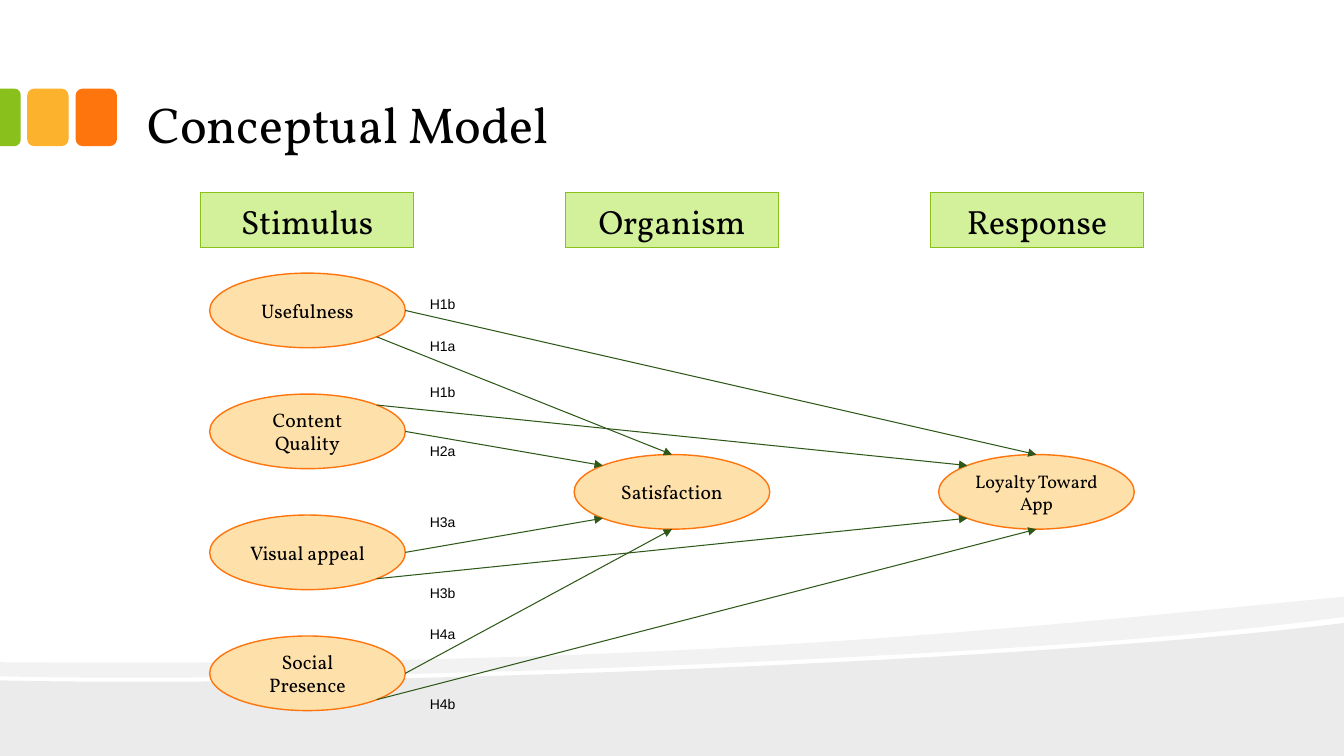
from dataclasses import dataclass
from math import cos, radians, sin

from lxml import etree
from pptx import Presentation
from pptx.dml.color import RGBColor
from pptx.enum.shapes import MSO_CONNECTOR, MSO_SHAPE
from pptx.enum.text import MSO_ANCHOR, MSO_AUTO_SIZE, PP_ALIGN
from pptx.oxml.ns import qn
from pptx.util import Inches, Pt

STRAIGHT = MSO_CONNECTOR.STRAIGHT
OVAL, RECTANGLE = MSO_SHAPE.OVAL, MSO_SHAPE.RECTANGLE
ROUNDED, TOP_ROUNDED = MSO_SHAPE.ROUNDED_RECTANGLE, MSO_SHAPE.ROUND_2_SAME_RECTANGLE
MIDDLE, BOTTOM = MSO_ANCHOR.MIDDLE, MSO_ANCHOR.BOTTOM
CENTER, LEFT = PP_ALIGN.CENTER, PP_ALIGN.LEFT
TITLE_ONLY = 5


@dataclass(frozen=True)
class Theme:
    ink: str = "000000"
    green: str = "89C01C"
    pale_green: str = "D3F09A"
    amber: str = "FCB22C"
    orange: str = "FE750E"
    pale_orange: str = "FEE0AB"
    arrow: str = "2E5818"
    serif: str = "Vollkorn"
    sans: str = "Arial"
    title_size: int = 36
    header_size: int = 24
    node_size: int = 14
    small_node_size: int = 13
    label_size: int = 10


@dataclass(frozen=True)
class Box:
    left: float
    top: float
    width: float
    height: float

    def emu(self):
        return [Inches(v) for v in (self.left, self.top, self.width, self.height)]


THEME = Theme()
SLIDE = Box(0, 0, 13.33, 7.5)
TITLE = Box(1.33, 0.17, 10.66, 1.42)
TABS = Box(0, 0.88, 1.16, 0.57)
HEADERS = Box(1.99, 1.91, 9.35, 0.55)
MODEL = Box(2.08, 2.71, 9.17, 4.34)
HEADER_WIDTH = 2.11
NODE_WIDTH, NODE_HEIGHT = 1.94, 0.74

# Name: column, row, type size
NODES = {
    "Satisfaction": (1, 1.5, THEME.node_size),
    "Usefulness": (0, 0, THEME.node_size),
    "Content Quality": (0, 1, THEME.node_size),
    "Visual appeal": (0, 2, THEME.node_size),
    "Social Presence": (0, 3, THEME.node_size),
    "Loyalty Toward App": (2, 1.5, THEME.small_node_size),
}
# Degrees clockwise from the right end of an oval
SITES = {"right": 0, "lower right": 45, "bottom": 90, "lower left": 135,
         "upper left": 225, "top": 270, "upper right": 315}
# Source, its site, target, its site, label, row of the label
PATHS = [
    ("Usefulness", "lower right", "Satisfaction", "top", "H1a", 0.49),
    ("Usefulness", "right", "Loyalty Toward App", "top", "H1b", 0.14),
    ("Content Quality", "right", "Satisfaction", "upper left", "H2a", 1.36),
    ("Content Quality", "upper right", "Loyalty Toward App", "upper left", "H1b", 0.87),
    ("Visual appeal", "right", "Satisfaction", "lower left", "H3a", 1.95),
    ("Visual appeal", "lower right", "Loyalty Toward App", "lower left", "H3b", 2.53),
    ("Social Presence", "lower right", "Loyalty Toward App", "bottom", "H4b", 3.45),
    ("Social Presence", "right", "Satisfaction", "bottom", "H4a", 2.87),
]


def paint(shape, fill, line=None, line_width=0.75):
    shape.shadow.inherit = False
    shape.fill.solid()
    shape.fill.fore_color.rgb = RGBColor.from_string(fill)
    if line:
        shape.line.color.rgb = RGBColor.from_string(line)
        shape.line.width = Pt(line_width)
    else:
        shape.line.fill.background()


def write(shape, text, size, font, anchor=MIDDLE, align=CENTER, insets=(0.1, 0.05)):
    frame = shape.text_frame
    frame.text = text
    frame.word_wrap = True
    frame.vertical_anchor = anchor
    frame.margin_left = frame.margin_right = Inches(insets[0])
    frame.margin_top = frame.margin_bottom = Inches(insets[1])
    paragraph = frame.paragraphs[0]
    paragraph.alignment = align
    run_font = paragraph.runs[0].font
    run_font.size, run_font.name = Pt(size), font
    run_font.color.rgb = RGBColor.from_string(THEME.ink)


def curve(start, control_1, control_2, end, steps=40):
    """Points along a cubic curve."""
    points = []
    for step in range(steps + 1):
        t = step / steps
        weights = ((1 - t) ** 3, 3 * t * (1 - t) ** 2, 3 * t * t * (1 - t), t ** 3)
        points.append(tuple(sum(w * p[axis] for w, p in zip(weights, (start, control_1, control_2, end)))
                            for axis in (0, 1)))
    return points


def add_band(slide, points, opacity):
    points = [(Inches(x), Inches(y)) for x, y in points]
    builder = slide.shapes.build_freeform(*points[0])
    builder.add_line_segments(points[1:], close=True)
    band = builder.convert_to_shape()
    paint(band, THEME.ink)
    color = band.fill._xPr.find(".//" + qn("a:srgbClr"))
    etree.SubElement(color, qn("a:alpha"), val=str(opacity * 1000))


def add_waves(slide, box):
    right, bottom = box.left + box.width, box.top + box.height
    # Broad wave down to the slide's foot
    crest = curve((0, 6.75), (3.52, 6.83), (10.42, 6.55), (right, 6.18))
    add_band(slide, crest + [(right, bottom), (0, bottom)], 8)
    # Thin wave above it
    upper = curve((0, 6.57), (6.52, 6.62), (9.71, 6.27), (right, 5.92))
    lower = curve((right, 6.12), (12.55, 6.23), (11.49, 6.33), (10.29, 6.41))
    lower += curve((10.29, 6.41), (6.98, 6.63), (2.58, 6.77), (0, 6.71))[1:]
    add_band(slide, upper + lower, 5)


def add_tabs(slide, box):
    width, pitch = 0.41, 0.48
    for index, color in enumerate((THEME.orange, THEME.amber)):
        left = box.left + box.width - width - index * pitch
        tab = slide.shapes.add_shape(ROUNDED, *Box(left, box.top, width, box.height).emu())
        paint(tab, color)
    # Half tab at the slide's edge, turned on its side
    depth = width / 2
    shift = (box.height - depth) / 2
    half = slide.shapes.add_shape(
        TOP_ROUNDED, *Box(box.left - shift, box.top + shift, box.height, depth).emu())
    half.rotation = 90
    half.adjustments[0] = 0.29
    paint(half, THEME.green)


def add_title(slide, box, text):
    title = slide.shapes.title
    title.left, title.top, title.width, title.height = box.emu()
    write(title, text, THEME.title_size, THEME.serif, BOTTOM, LEFT, (0.13, 0.07))
    title.text_frame.auto_size = MSO_AUTO_SIZE.NONE


def add_headers(slide, box, names):
    pitch = (box.width - HEADER_WIDTH) / (len(names) - 1)
    for column, name in enumerate(names):
        place = Box(box.left + column * pitch, box.top, HEADER_WIDTH, box.height)
        header = slide.shapes.add_shape(RECTANGLE, *place.emu())
        paint(header, THEME.pale_green, THEME.green)
        write(header, name, THEME.header_size, THEME.serif, BOTTOM, insets=(0.13, 0.07))


def site_point(place, site):
    angle = radians(SITES[site])
    return (Inches(place.left + place.width / 2 * (1 + cos(angle))),
            Inches(place.top + place.height / 2 * (1 + sin(angle))))


def add_arrow(slide, start, end):
    arrow = slide.shapes.add_connector(STRAIGHT, *start, *end)
    arrow.line.color.rgb = RGBColor.from_string(THEME.arrow)
    arrow.line.width = Pt(0.75)
    etree.SubElement(arrow.line._get_or_add_ln(), qn("a:tailEnd"), type="triangle")
    etree.SubElement(arrow._element.spPr, qn("a:effectLst"))


def add_model(slide, box):
    column_pitch = (box.width - NODE_WIDTH) / 2
    row_pitch = (box.height - NODE_HEIGHT) / 3
    places = {}
    # Ovals
    for name, (column, row, size) in NODES.items():
        places[name] = Box(box.left + column * column_pitch, box.top + row * row_pitch,
                           NODE_WIDTH, NODE_HEIGHT)
        node = slide.shapes.add_shape(OVAL, *places[name].emu())
        paint(node, THEME.pale_orange, THEME.orange, 1)
        write(node, name, size, THEME.serif, insets=(0.05, 0.05))
    # Arrows and their labels
    for source, source_site, target, target_site, text, row in PATHS:
        add_arrow(slide, site_point(places[source], source_site),
                  site_point(places[target], target_site))
        place = Box(box.left + NODE_WIDTH + 0.14, box.top + row * row_pitch, 0.46, 0.27)
        label = slide.shapes.add_textbox(*place.emu())
        write(label, text, THEME.label_size, THEME.sans, MSO_ANCHOR.TOP)
        label.text_frame.word_wrap = False


def main():
    presentation = Presentation()
    presentation.slide_width, presentation.slide_height = SLIDE.emu()[2:]
    slide = presentation.slides.add_slide(presentation.slide_layouts[TITLE_ONLY])
    add_waves(slide, SLIDE)
    add_tabs(slide, TABS)
    add_title(slide, TITLE, "Conceptual Model")
    add_model(slide, MODEL)
    add_headers(slide, HEADERS, ("Stimulus", "Organism", "Response"))
    presentation.save("out.pptx")


if __name__ == "__main__":
    main()
